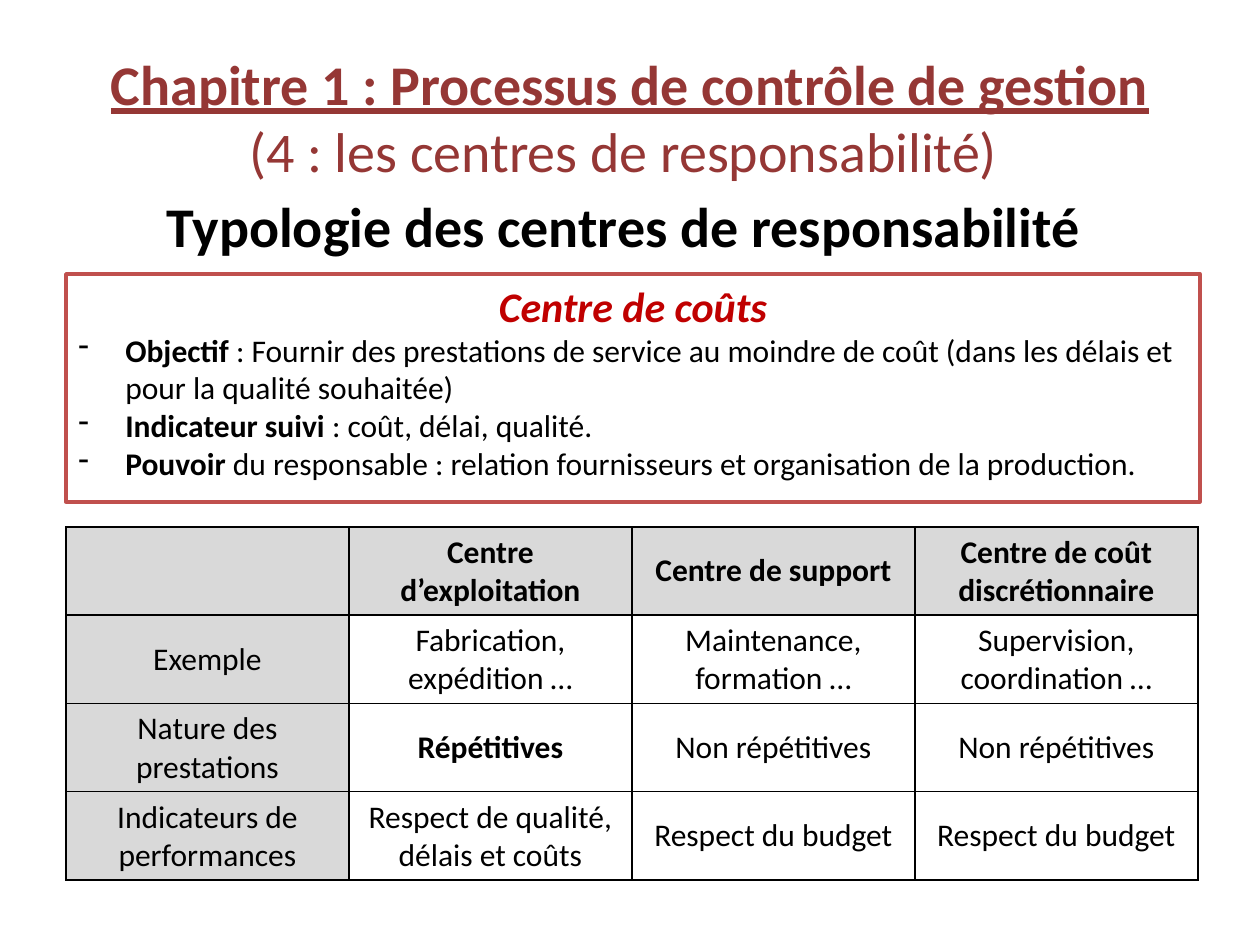
from lxml import etree
from pptx import Presentation
from pptx.dml.color import RGBColor
from pptx.enum.shapes import MSO_SHAPE
from pptx.enum.text import MSO_ANCHOR, PP_ALIGN
from pptx.oxml.ns import qn
from pptx.util import Pt

PX = 914400 // 126
CENTER, LEFT = PP_ALIGN.CENTER, PP_ALIGN.LEFT
TOP, MIDDLE = MSO_ANCHOR.TOP, MSO_ANCHOR.MIDDLE
RECT = MSO_SHAPE.RECTANGLE

BLACK = RGBColor(0x00, 0x00, 0x00)
WHITE = RGBColor(0xFF, 0xFF, 0xFF)
GREY = RGBColor(0xD9, 0xD9, 0xD9)
BROWN = RGBColor(0x95, 0x37, 0x35)
RED = RGBColor(0xC0, 0x00, 0x00)
BORDER_RED = RGBColor(0xC0, 0x50, 0x4D)


def add_run(p, text, size, color=BLACK, bold=False, italic=False, underline=False):
    r = p.add_run()
    r.text = text
    r.font.name = "Calibri"
    r.font.size = Pt(size)
    r.font.color.rgb = color
    r.font.bold = bold
    r.font.italic = italic
    r.font.underline = underline


def add_border(cell):
    """Draw a thin black line on all four sides of a cell."""
    tc_pr = cell._tc.get_or_add_tcPr()
    for i, side in enumerate(("a:lnL", "a:lnR", "a:lnT", "a:lnB")):
        ln = etree.Element(qn(side), w=str(Pt(1)))
        fill = etree.SubElement(ln, qn("a:solidFill"))
        etree.SubElement(fill, qn("a:srgbClr"), val=str(BLACK))
        tc_pr.insert(i, ln)


prs = Presentation()
prs.slide_width, prs.slide_height = 1260 * PX, 945 * PX
s = prs.slides.add_slide(prs.slide_layouts[6])

# Subtitle
tf = s.shapes.add_textbox(63 * PX, 185 * PX, 1134 * PX, 624 * PX).text_frame
tf.word_wrap = True
p = tf.paragraphs[0]
p.alignment = CENTER
add_run(p, "Typologie des centres de responsabilité ", 32, bold=True)

# Cost centre box
sp = s.shapes.add_shape(RECT, 66 * PX, 274 * PX, 1134 * PX, 228 * PX)
sp.shadow.inherit = False
sp.fill.solid()
sp.fill.fore_color.rgb = WHITE
sp.line.color.rgb = BORDER_RED
sp.line.width = Pt(2)
tf = sp.text_frame
tf.word_wrap = True
tf.vertical_anchor = TOP
p = tf.paragraphs[0]
p.alignment = CENTER
add_run(p, "Centre de coûts", 24, RED, bold=True, italic=True)

points = [
    ("Objectif", " : Fournir des prestations de service au moindre de coût "
     "(dans les délais et pour la qualité souhaitée)"),
    ("Indicateur suivi ", ": coût, délai, qualité."),
    ("Pouvoir", " du responsable : relation fournisseurs et organisation de la production."),
]
for term, detail in points:
    p = tf.add_paragraph()
    p.alignment = LEFT
    p_pr = p._p.get_or_add_pPr()
    p_pr.set("marL", str(47 * PX))
    p_pr.set("indent", str(-47 * PX))
    etree.SubElement(p_pr, qn("a:buChar"), char="-")
    add_run(p, term, 18, bold=True)
    add_run(p, detail, 18)

# Comparison table
rows = [
    ["", "Centre d’exploitation", "Centre de support", "Centre de coût discrétionnaire"],
    ["Exemple", "Fabrication, expédition …", "Maintenance, formation …",
     "Supervision, coordination …"],
    ["Nature des prestations", "Répétitives", "Non répétitives", "Non répétitives"],
    ["Indicateurs de performances", "Respect de qualité, délais et coûts",
     "Respect du budget", "Respect du budget"],
]
table = s.shapes.add_table(4, 4, 66 * PX, 527 * PX, 1132 * PX, 352 * PX).table
for i, row in enumerate(rows):
    for j, text in enumerate(row):
        cell = table.cell(i, j)
        cell.vertical_anchor = MIDDLE
        cell.fill.solid()
        cell.fill.fore_color.rgb = GREY if i == 0 or j == 0 else WHITE
        add_border(cell)
        if text:
            p = cell.text_frame.paragraphs[0]
            p.alignment = CENTER
            add_run(p, text, 18, bold=i == 0 or text == "Répétitives")

# Title
tf = s.shapes.add_textbox(63 * PX, 38 * PX, 1134 * PX, 157 * PX).text_frame
tf.word_wrap = True
tf.vertical_anchor = MIDDLE
p = tf.paragraphs[0]
p.alignment = CENTER
add_run(p, "Chapitre 1 : Processus de contrôle de gestion", 32, BROWN, bold=True, underline=True)
p = tf.add_paragraph()
p.alignment = CENTER
add_run(p, "(4 : les centres de responsabilité) ", 32, BROWN)

prs.save("out.pptx")
